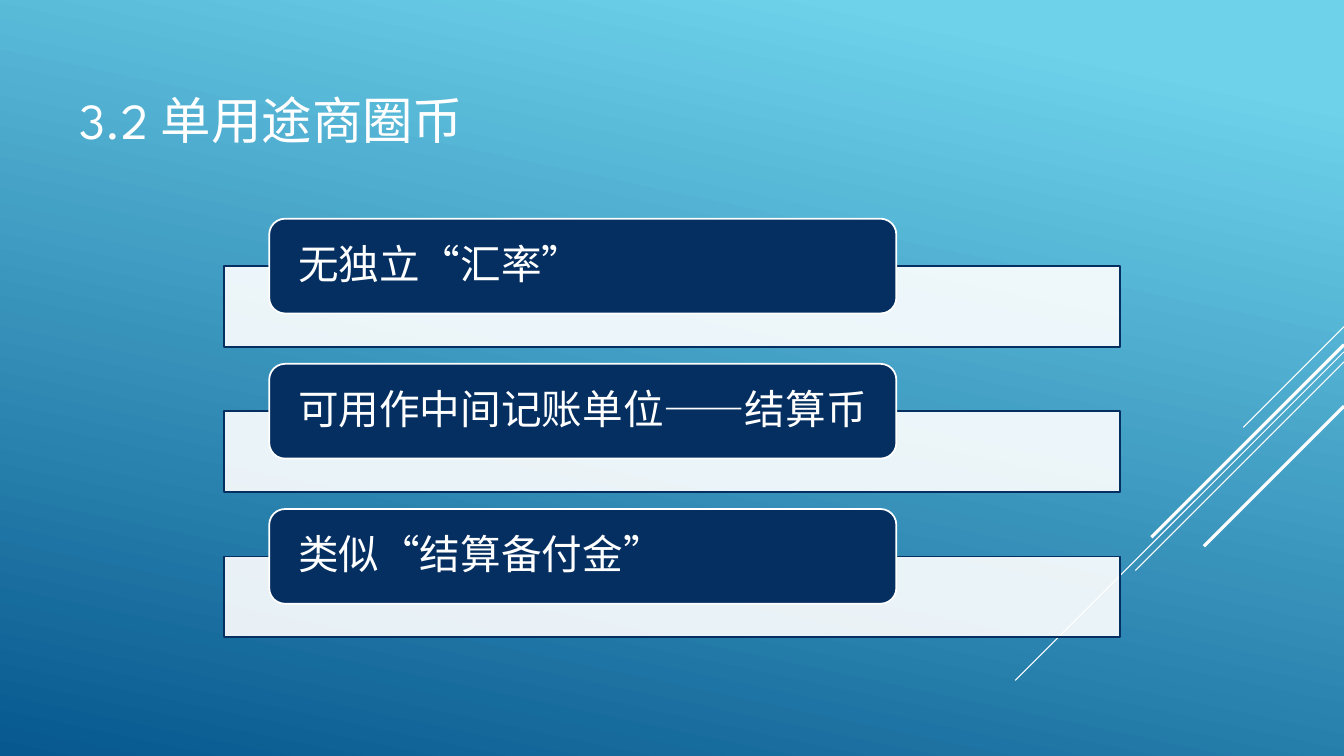
from lxml import etree
from pptx import Presentation, util as u
from pptx.dml.color import RGBColor
from pptx.enum import lang, shapes, text
from pptx.oxml import ns

WHITE = RGBColor(0xFF, 0xFF, 0xFF)
NAVY = RGBColor(0x05, 0x2F, 0x61)
SKY = RGBColor(0x6E, 0xD2, 0xEB)
DEEP = RGBColor(0x06, 0x58, 0x8E)
PX = 9144

RAYS = [
    (324, 100, 0.75),
    (349, 326, 0.75),
    (359, 207, 0.75),
    (342, 191, 2.25),
    (403, 139, 2.25),
]
POINTS = ["无独立“汇率”", "可用作中间记账单位——结算币", "类似“结算备付金”"]


class Deck:
    """Draws styled elements on the current slide, with lengths in px."""

    font = "League Spartan"

    def __init__(self, wide, high):
        self.prs = Presentation()
        self.prs.slide_width = wide * PX
        self.prs.slide_height = high * PX
        self.slide = self.prs.slides.add_slide(self.prs.slide_layouts[6])

    def back(self, top, low, angle):
        fill = self.slide.background.fill
        fill.gradient()
        fill.gradient_angle = 360 - angle
        for stop, (color, spot) in zip(fill.gradient_stops, [(top, 0.1), (low, 1)]):
            stop.color.rgb = color
            stop.position = spot

    def line(self, x1, y1, x2, y2, width):
        line = self.slide.shapes.add_connector(
            shapes.MSO_CONNECTOR.STRAIGHT, x1 * PX, y1 * PX, x2 * PX, y2 * PX)
        line.line.color.rgb = WHITE
        line.line.width = u.Pt(width)
        etree.SubElement(line._element.spPr, ns.qn("a:effectLst"))

    def box(self, kind, x, y, w, h, fill, edge, alpha=100):
        box = self.slide.shapes.add_shape(kind, x * PX, y * PX, w * PX, h * PX)
        box.shadow.inherit = False
        box.fill.solid()
        box.fill.fore_color.rgb = fill
        box.line.color.rgb = edge
        box.line.width = u.Pt(1.25)
        if alpha < 100:
            tint = box._element.spPr.find(ns.qn("a:solidFill"))[0]
            etree.SubElement(tint, ns.qn("a:alpha"), val=str(alpha * 1000))
        return box

    def area(self, x, y, w, h):
        return self.slide.shapes.add_textbox(x * PX, y * PX, w * PX, h * PX)

    def label(self, shape, words, size, inset, space=1.0):
        frame = shape.text_frame
        frame.word_wrap = True
        frame.vertical_anchor = text.MSO_ANCHOR.MIDDLE
        frame.margin_left = frame.margin_right = inset * PX
        frame.margin_top = frame.margin_bottom = 0
        para = frame.paragraphs[0]
        para.alignment = text.PP_ALIGN.LEFT
        para.line_spacing = space
        run = para.add_run()
        run.text = words
        run.font.name = self.font
        run.font.size = u.Pt(size)
        run.font.color.rgb = WHITE
        run.font.language_id = lang.MSO_LANGUAGE_ID.SIMPLIFIED_CHINESE


def main():
    deck = Deck(1333, 750)
    deck.back(SKY, DEEP, 102)
    for top, run, width in RAYS:
        deck.line(1333, top, 1333 - run, top + run, width)
    deck.label(deck.area(69, 36, 933, 165), "3.2 单用途商圈币", 36, 10)
    kinds = shapes.MSO_SHAPE
    for row, words in enumerate(POINTS):
        top = 217 + 144 * row
        deck.box(kinds.RECTANGLE, 222, top + 47, 889, 80, WHITE, NAVY, 90)
        card = deck.box(kinds.ROUNDED_RECTANGLE, 267, top, 622, 94, NAVY, WHITE)
        deck.label(card, words, 29, 24, 0.9)
    deck.prs.save("out.pptx")


if __name__ == "__main__":
    main()
